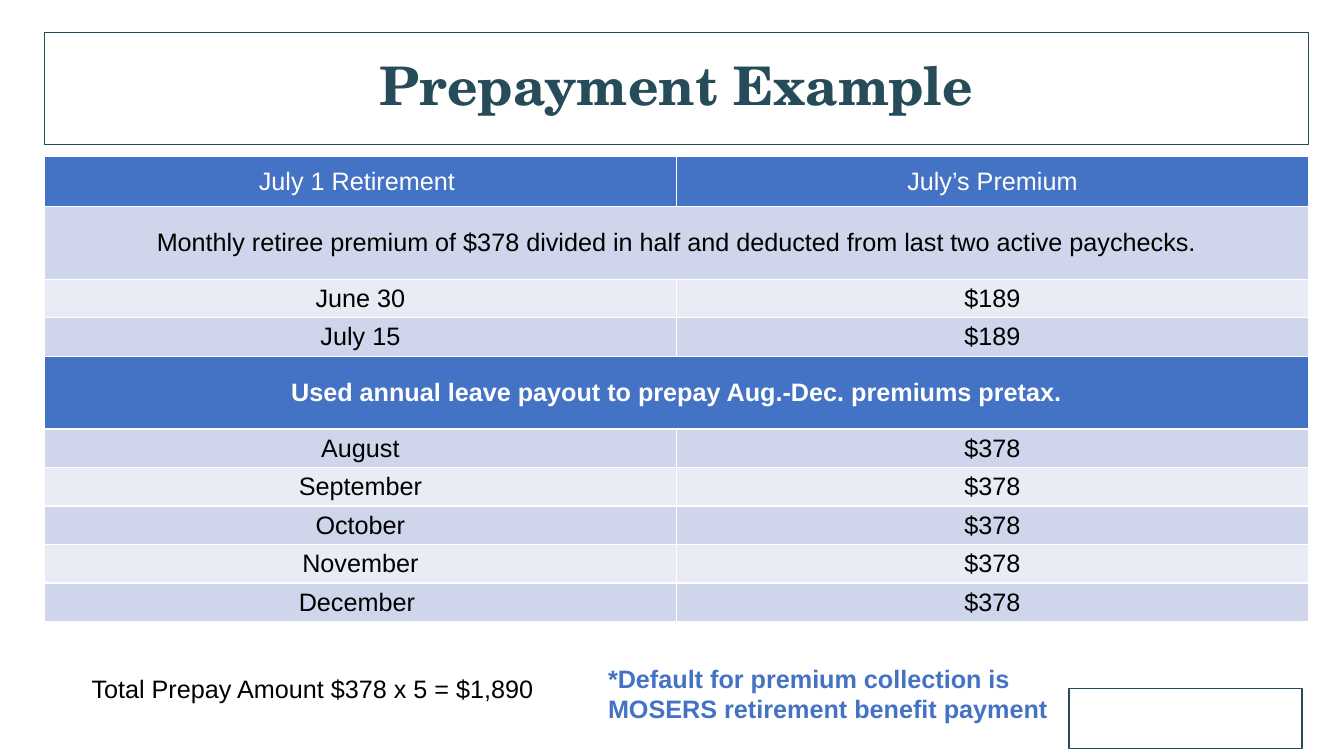
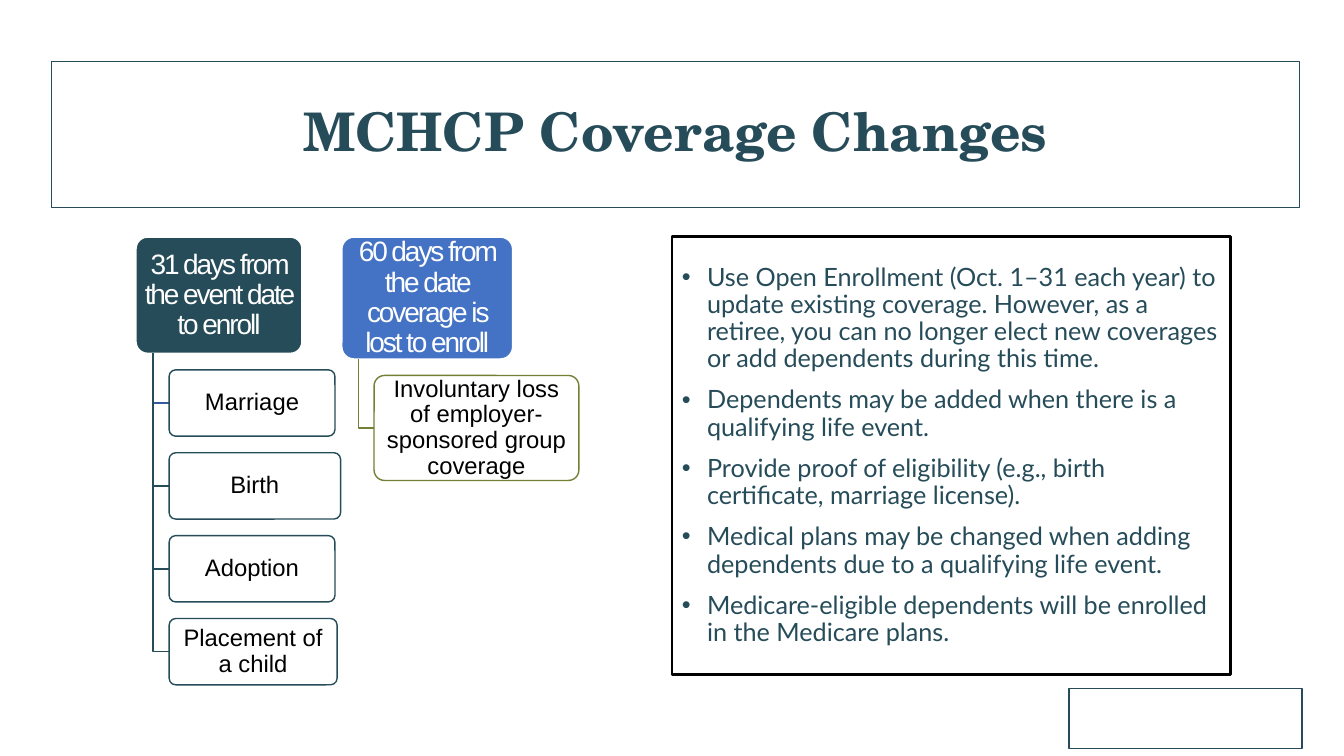
from lxml import etree
from pptx import Presentation
from pptx.dml.color import RGBColor
from pptx.enum.shapes import MSO_SHAPE
from pptx.enum.text import MSO_ANCHOR, PP_ALIGN
from pptx.oxml.ns import qn
from pptx.util import Pt

RECTANGLE = MSO_SHAPE.RECTANGLE
ROUNDED = MSO_SHAPE.ROUNDED_RECTANGLE
MIDDLE = MSO_ANCHOR.MIDDLE
TOP = MSO_ANCHOR.TOP
CENTER = PP_ALIGN.CENTER
LEFT = PP_ALIGN.LEFT

WHITE = RGBColor(0xFF, 0xFF, 0xFF)
BLACK = RGBColor(0x00, 0x00, 0x00)
TEAL = RGBColor(0x26, 0x4C, 0x59)
BLUE = RGBColor(0x44, 0x72, 0xC4)
DARK_BLUE = RGBColor(0x36, 0x5B, 0x9D)
OLIVE = RGBColor(0x74, 0x80, 0x35)
BAND_DARK = RGBColor(0xCF, 0xD5, 0xEA)
BAND_LIGHT = RGBColor(0xE9, 0xEB, 0xF5)

TITLE_FONT = "TeX Gyre Schola"
TABLE_FONT = "Arial"
LIST_FONT = "Lato"


def add_box(slide, kind, left, top, width, height, fill, line, line_width=1, margins=(7.2, 3.6), anchor=MIDDLE):
    shape = slide.shapes.add_shape(kind, Pt(left), Pt(top), Pt(width), Pt(height))
    shape.shadow.inherit = False
    shape.fill.solid()
    shape.fill.fore_color.rgb = fill
    if line is None:
        shape.line.fill.background()
    else:
        shape.line.color.rgb = line
        shape.line.width = Pt(line_width)
    if kind == ROUNDED:
        shape.adjustments[0] = 0.1
    frame = shape.text_frame
    frame.word_wrap = True
    frame.vertical_anchor = anchor
    frame.margin_left = frame.margin_right = Pt(margins[0])
    frame.margin_top = frame.margin_bottom = Pt(margins[1])
    return shape


def add_text(paragraph, text, font, size, color, bold=False, align=CENTER, line_spacing=None):
    paragraph.alignment = align
    if line_spacing:
        paragraph.line_spacing = line_spacing
    run = paragraph.add_run()
    run.text = text
    run.font.name = font
    run.font.size = Pt(size)
    run.font.bold = bold
    run.font.color.rgb = color
    return run


presentation = Presentation()
presentation.slide_width = Pt(960)
presentation.slide_height = Pt(540)

slides = []
for title, left, top, width, height in [
    ("Prepayment Example", 31.7, 23, 903, 80.6),
    ("MCHCP Coverage Changes", 36.8, 44, 891.6, 104.4),
]:
    slide = presentation.slides.add_slide(presentation.slide_layouts[6])
    add_box(slide, RECTANGLE, 763.7, 491.6, 166.4, 43.2, WHITE, TEAL)
    title_box = add_box(slide, RECTANGLE, left, top, width, height, WHITE, TEAL, 0.75, (14.4, 3.6))
    paragraph = title_box.text_frame.paragraphs[0]
    paragraph.space_after = Pt(6)
    add_text(paragraph, title, TITLE_FONT, 38, TEAL, True, line_spacing=0.9)
    slides.append(slide)
prepayment_slide, changes_slide = slides

HEADER_HEIGHT, NOTE_HEIGHT, MONTH_HEIGHT = 36, 52, 27.5
premium_rows = [
    (HEADER_HEIGHT, BLUE, ["July 1 Retirement ", "July’s Premium"]),
    (NOTE_HEIGHT, BAND_DARK, ["Monthly retiree premium of $378 divided in half and deducted from last two active paychecks."]),
    (MONTH_HEIGHT, BAND_LIGHT, ["June 30", "$189"]),
    (MONTH_HEIGHT, BAND_DARK, ["July 15", "$189"]),
    (NOTE_HEIGHT, BLUE, ["Used annual leave payout to prepay Aug.-Dec. premiums pretax."]),
]
for index, month in enumerate(["August", "September", "October", "November", "December "]):
    premium_rows.append((MONTH_HEIGHT, [BAND_DARK, BAND_LIGHT][index % 2], [month, "$378"]))

table_height = sum(height for height, fill, texts in premium_rows)
table = prepayment_slide.shapes.add_table(
    len(premium_rows), 2, Pt(31.7), Pt(111.5), Pt(903), Pt(table_height)
).table
table.first_row = False
table.horz_banding = False
for column in table.columns:
    column.width = Pt(451.5)

for row_index, (height, fill, texts) in enumerate(premium_rows):
    table.rows[row_index].height = Pt(height)
    merged = len(texts) == 1
    if merged:
        table.cell(row_index, 0).merge(table.cell(row_index, 1))
    for column_index in range(2):
        cell = table.cell(row_index, column_index)
        cell.vertical_anchor = MIDDLE
        cell.margin_top = cell.margin_bottom = Pt(3)
        properties = cell._tc.get_or_add_tcPr()
        for side in ("a:lnL", "a:lnR", "a:lnT", "a:lnB"):
            border = etree.SubElement(properties, qn(side), w=str(Pt(1)))
            border_fill = etree.SubElement(border, qn("a:solidFill"))
            etree.SubElement(border_fill, qn("a:srgbClr"), val=str(WHITE))
        cell.fill.solid()
        cell.fill.fore_color.rgb = fill
        if column_index < len(texts):
            color = WHITE if fill == BLUE else BLACK
            add_text(cell.text_frame.paragraphs[0], texts[column_index], TABLE_FONT, 18, color, merged and fill == BLUE)

total_box = add_box(prepayment_slide, RECTANGLE, 36.7, 470, 373, 51, WHITE, None, margins=(14.4, 11), anchor=TOP)
add_text(total_box.text_frame.paragraphs[0], "Total Prepay Amount $378 x 5 = $1,890", TABLE_FONT, 18, BLACK)

default_note = prepayment_slide.shapes.add_textbox(Pt(427.2), Pt(470), Pt(331), Pt(51))
default_note.text_frame.word_wrap = True
add_text(
    default_note.text_frame.paragraphs[0],
    "*Default for premium collection is MOSERS retirement benefit payment",
    TABLE_FONT, 18, BLUE, True, LEFT,
)

TREE_TOP, TREE_GAP, TRUNK_INDENT = 169.4, 11.8, 12
deadline_trees = [
    ("31 days from the event date to enroll", 97.2, 118.5, 83, TEAL, TEAL, 23.6, 47.4, [
        ("Marriage", 118.5, DARK_BLUE),
        ("Birth", 122.5, TEAL),
        ("Adoption", 118.5, TEAL),
        ("Placement of a child", 120, TEAL),
    ]),
    ("60 days from the date coverage is lost to enroll", 244.2, 122, 87, BLUE, OLIVE, 23, 75, [
        ("Involuntary loss of employer-sponsored group coverage", 146.3, OLIVE),
    ]),
]
for deadline, left, width, height, fill, outline, indent, event_height, events in deadline_trees:
    header = add_box(changes_slide, ROUNDED, left, TREE_TOP, width, height, fill, WHITE, margins=(3, 2))
    run = add_text(header.text_frame.paragraphs[0], deadline, TABLE_FONT, 20, WHITE, line_spacing=0.9)
    run._r.get_or_add_rPr().set("spc", "-150")
    trunk_left = Pt(left + TRUNK_INDENT)
    trunk_top = TREE_TOP + height
    event_left = left + indent
    event_top = trunk_top + TREE_GAP
    for event, event_width, elbow_color in events:
        middle = Pt(event_top + event_height / 2)
        builder = changes_slide.shapes.build_freeform(trunk_left, Pt(trunk_top))
        builder.add_line_segments([(trunk_left, middle), (Pt(event_left), middle)], close=False)
        elbow = builder.convert_to_shape()
        elbow.shadow.inherit = False
        elbow.fill.background()
        elbow.line.color.rgb = elbow_color
        elbow.line.width = Pt(1)
        event_box = add_box(
            changes_slide, ROUNDED, event_left, event_top, event_width, event_height, WHITE, outline, margins=(3, 2)
        )
        add_text(event_box.text_frame.paragraphs[0], event, TABLE_FONT, 17, BLACK, line_spacing=0.9)
        event_top += event_height + TREE_GAP

rules_box = add_box(changes_slide, RECTANGLE, 480, 169, 399, 313, WHITE, BLACK, 2)
rules = [
    "Use Open Enrollment (Oct. 1–31 each year) to update existing coverage. However, as a retiree, you can no longer elect new coverages or add dependents during this time.",
    "Dependents may be added when there is a qualifying life event.",
    "Provide proof of eligibility (e.g., birth certificate, marriage license).",
    "Medical plans may be changed when adding dependents due to a qualifying life event.",
    "Medicare-eligible dependents will be enrolled in the Medicare plans.",
]
for index, rule in enumerate(rules):
    frame = rules_box.text_frame
    paragraph = frame.add_paragraph() if index else frame.paragraphs[0]
    properties = paragraph._p.get_or_add_pPr()
    properties.set("marL", str(Pt(18)))
    properties.set("indent", str(-Pt(18)))
    etree.SubElement(properties, qn("a:buFont"), typeface="Arial")
    etree.SubElement(properties, qn("a:buChar"), char="•")
    if index:
        paragraph.space_before = Pt(10)
    add_text(paragraph, rule, LIST_FONT, 18, TEAL, align=LEFT, line_spacing=0.9)

presentation.save("out.pptx")
